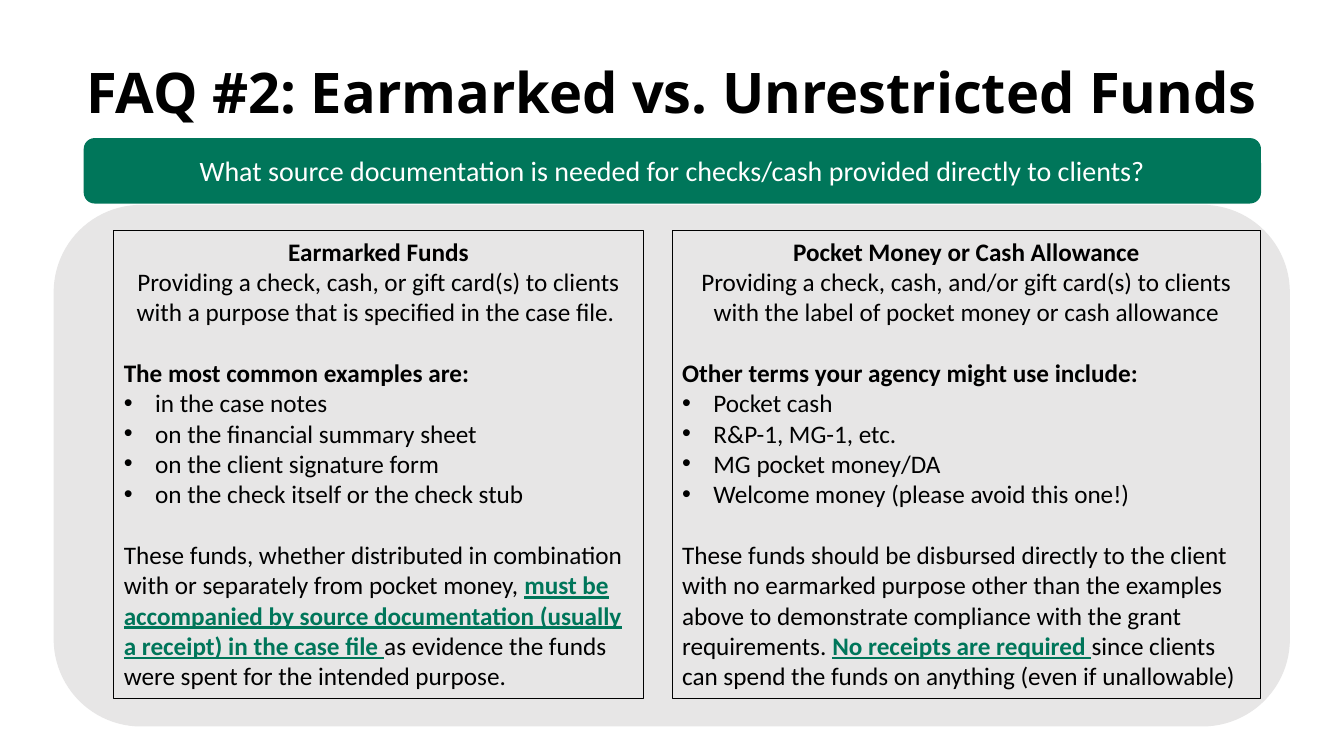
"""Build the FAQ slide comparing earmarked and unrestricted client funds."""
from dataclasses import dataclass

from lxml import etree
from pptx import Presentation
from pptx.dml import color
from pptx.enum import shapes, text
from pptx.oxml import ns
from pptx.util import Cm, Pt

BLACK, WHITE, GREEN, GREY = "000000", "FFFFFF", "00765A", "E7E6E6"
BODY_FONT, TITLE_FONT = "Calibri", "Open Sans"
BODY_SIZE = 18
BLANK_LINE = 22
BULLET_INDENT = Cm(0.79)
COLUMN_TOP, COLUMN_HEIGHT = 5.82, 11.79
CENTER, LEFT = text.PP_ALIGN.CENTER, text.PP_ALIGN.LEFT
RECTANGLE = shapes.MSO_SHAPE.RECTANGLE
ROUNDED = shapes.MSO_SHAPE.ROUNDED_RECTANGLE


@dataclass
class Column:
    """One bordered column of guidance."""
    left: float
    width: float
    heading: str
    definition: str
    list_heading: str
    bullets: list[str]
    before: str
    emphasis: str
    after: str


COLUMNS = [
    Column(
        2.87, 13.34, "Earmarked Funds",
        "Providing a check, cash, or gift card(s) to clients with a purpose "
        "that is specified in the case file. ",
        "The most common examples are:",
        ["in the case notes", "on the financial summary sheet",
         "on the client signature form", "on the check itself or the check stub"],
        "These funds, whether distributed in combination with or separately "
        "from pocket money, ",
        "must be accompanied by source documentation (usually a receipt) "
        "in the case file ",
        "as evidence the funds were spent for the intended purpose."),
    Column(
        16.94, 14.83, "Pocket Money or Cash Allowance",
        "Providing a check, cash, and/or gift card(s) to clients with the "
        "label of pocket money or cash allowance",
        "Other terms your agency might use include:",
        ["Pocket cash", "R&P-1, MG-1, etc.", "MG pocket money/DA",
         "Welcome money (please avoid this one!)"],
        "These funds should be disbursed directly to the client with no "
        "earmarked purpose other than the examples above to demonstrate "
        "compliance with the grant requirements. ",
        "No receipts are required ",
        "since clients can spend the funds on anything (even if unallowable)"),
]


def rgb(value: str) -> color.RGBColor:
    """Turn a hex string into a colour."""
    return color.RGBColor.from_string(value)


def add_box(page, kind, left: float, top: float, width: float, height: float,
            fill: str | None = None, line: str | None = None, weight: float = 1):
    """Draw a flat shape, with lengths in centimetres."""
    box = page.shapes.add_shape(kind, Cm(left), Cm(top), Cm(width), Cm(height))
    box.shadow.inherit = False
    if fill:
        box.fill.solid()
        box.fill.fore_color.rgb = rgb(fill)
    else:
        box.fill.background()
    if line:
        box.line.color.rgb = rgb(line)
        box.line.width = Pt(weight)
    else:
        box.line.fill.background()
    box.text_frame.word_wrap = True
    return box


def style(para, size: float, ink: str = BLACK, name: str = BODY_FONT,
          bold: bool = False, align=LEFT) -> None:
    """Set a paragraph's alignment and font."""
    para.alignment = align
    para.font.size = Pt(size)
    para.font.name = name
    para.font.bold = bold
    para.font.color.rgb = rgb(ink)


def add_bullet(para) -> None:
    """Give a paragraph a hanging bullet."""
    properties = para._p.get_or_add_pPr()
    properties.set("marL", str(BULLET_INDENT))
    properties.set("indent", str(-BULLET_INDENT))
    font = etree.SubElement(properties, ns.qn("a:buFont"))
    font.set("typeface", "Arial")
    etree.SubElement(properties, ns.qn("a:buChar")).set("char", "•")


def add_column(page, column: Column) -> None:
    """Draw one column with its heading, list and closing rule."""
    box = add_box(page, RECTANGLE, column.left, COLUMN_TOP, column.width,
                  COLUMN_HEIGHT, line=BLACK, weight=0.75)
    frame = box.text_frame
    frame.vertical_anchor = text.MSO_ANCHOR.TOP

    heading = frame.paragraphs[0]
    heading.text = column.heading
    style(heading, BODY_SIZE, bold=True, align=CENTER)

    definition = frame.add_paragraph()
    definition.text = column.definition
    style(definition, BODY_SIZE, align=CENTER)

    list_heading = frame.add_paragraph()
    list_heading.text = column.list_heading
    list_heading.space_before = Pt(BLANK_LINE)
    style(list_heading, BODY_SIZE, bold=True)

    for item in column.bullets:
        para = frame.add_paragraph()
        para.text = item
        add_bullet(para)
        style(para, BODY_SIZE)

    closing = frame.add_paragraph()
    closing.space_before = Pt(BLANK_LINE)
    style(closing, BODY_SIZE)
    for words in (column.before, column.emphasis, column.after):
        span = closing.add_run()
        span.text = words
        if words == column.emphasis:
            span.font.bold = True
            span.font.underline = True
            span.font.color.rgb = rgb(GREEN)


def main() -> None:
    """Build and save the deck."""
    deck = Presentation()
    deck.slide_width, deck.slide_height = Cm(33.87), Cm(19.05)
    page = deck.slides.add_slide(deck.slide_layouts[6])

    title = page.shapes.add_textbox(Cm(0.58), Cm(1.32), Cm(32.69), Cm(1.96))
    title.text_frame.word_wrap = True
    para = title.text_frame.paragraphs[0]
    para.text = "FAQ #2: Earmarked vs. Unrestricted Funds"
    style(para, 40, name=TITLE_FONT, bold=True, align=CENTER)

    add_box(page, ROUNDED, 1.37, 5.18, 31.12, 13.11, GREY, GREY)
    for column in COLUMNS:
        add_column(page, column)

    banner = add_box(page, ROUNDED, 2.11, 3.48, 29.67, 1.65, GREEN)
    banner.text_frame.vertical_anchor = text.MSO_ANCHOR.MIDDLE
    para = banner.text_frame.paragraphs[0]
    para.text = ("What source documentation is needed for checks/cash "
                 "provided directly to clients?")
    style(para, 20, WHITE, align=CENTER)

    deck.save("out.pptx")


if __name__ == "__main__":
    main()
